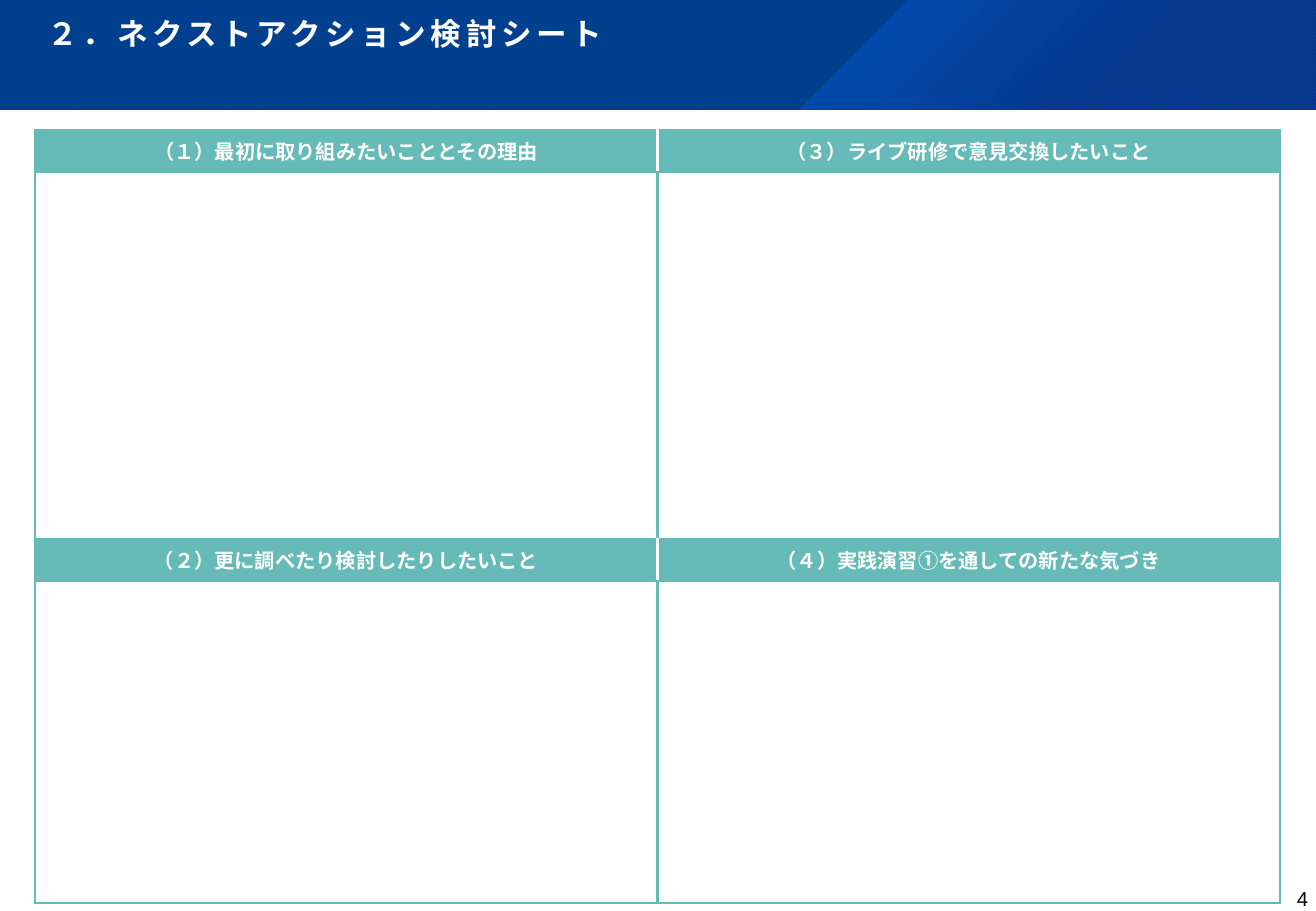
from lxml import etree
from pptx import Presentation
from pptx import util as u
from pptx.dml.color import RGBColor
from pptx.enum import dml, shapes, text
from pptx.oxml import parse_xml
from pptx.oxml.ns import nsdecls, qn

PX = 7526  # EMU per px
W, H = 1316, 911
COLORS = {
    "navy": "004292", "stripe": "003579", "sky": "0064DF", "indigo": "0C338E",
    "teal": "66BAB7", "white": "FFFFFF", "black": "000000",
}
HEADINGS = [
    ["（１）最初に取り組みたいこととその理由", "（３）ライブ研修で意見交換したいこと"],
    ["（２）更に調べたり検討したりしたいこと", "（４）実践演習①を通しての新たな気づき"],
]


def px(*lengths):
    return [u.Emu(n * PX) for n in lengths]


def rgb(name):
    return RGBColor.from_string(COLORS[name])


def write(p, words, size, font, color, align, bold=False):
    r = p.add_run()
    r.text = words
    p.alignment = align
    f = p.font
    f.size, f.name, f.bold = u.Pt(size), font, bold
    f.color.rgb = rgb(color)
    return r


def set_margins(tf, left, top, right, bottom):
    tf.margin_left, tf.margin_top, tf.margin_right, tf.margin_bottom = px(
        left, top, right, bottom)


def fill_glow(sp):
    """Fill with a translucent gradient spreading from the top left corner."""
    stops = "".join(
        f'<a:gs pos="{pos}"><a:srgbClr val="{COLORS[name]}">'
        f'<a:alpha val="{alpha}"/></a:srgbClr></a:gs>'
        for pos, name, alpha in [(0, "sky", 50000), (62000, "indigo", 55000)])
    grad = parse_xml(
        f'<a:gradFill {nsdecls("a")} rotWithShape="1"><a:gsLst>{stops}</a:gsLst>'
        '<a:path path="circle"><a:fillToRect r="100000" b="100000"/></a:path>'
        '</a:gradFill>')
    sp.fill.background()
    pr = sp._element.spPr
    pr.replace(pr.find(qn("a:noFill")), grad)


def add_header(s, x, y, w, h, words):
    band = s.shapes.add_shape(shapes.MSO_SHAPE.RECTANGLE, *px(x, y, w, h))
    band.fill.patterned()
    band.fill.pattern = dml.MSO_PATTERN.DARK_UPWARD_DIAGONAL
    band.fill.fore_color.rgb = rgb("stripe")
    band.fill.back_color.rgb = rgb("navy")

    right, bottom = x + w, y + h
    fb = s.shapes.build_freeform(right - 407, y, scale=PX)
    fb.add_line_segments([(right, y), (right, bottom), (right - 517, bottom)])
    slant = fb.convert_to_shape()
    fill_glow(slant)
    for sp in (band, slant):
        sp.line.fill.background()
        sp.shadow.inherit = False

    title = s.shapes.title
    title.left, title.top, title.width, title.height = px(x, y, w, h)
    s.shapes._spTree.append(title._element)  # bring to front
    tf = title.text_frame
    tf.auto_size = text.MSO_AUTO_SIZE.NONE
    tf.vertical_anchor = text.MSO_ANCHOR.TOP
    set_margins(tf, 47, 19, 44, 0)
    p = tf.paragraphs[0]
    p.line_spacing = 0.9
    r = write(p, words, 18.1, "Lato", "white", text.PP_ALIGN.LEFT, True)
    r._r.get_or_add_rPr().set("spc", "270")


def set_borders(cell, **sides):
    pr = cell._tc.get_or_add_tcPr()
    for i, side in enumerate("LRTB"):
        ln = etree.Element(qn(f"a:ln{side}"), w=str(u.Pt(1.5)))
        fill = etree.SubElement(ln, qn("a:solidFill"))
        etree.SubElement(fill, qn("a:srgbClr"), val=COLORS[sides.get(side, "teal")])
        pr.insert(i, ln)


def add_worksheet(s, x, y, w, row_heights):
    n_rows, n_cols = len(row_heights), len(HEADINGS[0])
    table = s.shapes.add_table(
        n_rows, n_cols, *px(x, y, w, sum(row_heights))).table
    table.first_row = table.horz_banding = False
    for row, height in zip(table.rows, row_heights):
        row.height = px(height)[0]
    for i in range(n_rows):
        for j in range(n_cols):
            cell = table.cell(i, j)
            is_heading = i % 2 == 0
            cell.fill.solid()
            cell.fill.fore_color.rgb = rgb("teal" if is_heading else "white")
            if is_heading:
                cell.vertical_anchor = text.MSO_ANCHOR.MIDDLE
                write(cell.text_frame.paragraphs[0], HEADINGS[i // 2][j], 12,
                      "Lato", "white", text.PP_ALIGN.CENTER, True)
                set_borders(cell, **{"R" if j == 0 else "L": "white"})
            else:
                set_borders(cell)


def add_page_number(s, x, y, w, h, number):
    tf = s.shapes.add_textbox(*px(x, y, w, h)).text_frame
    tf.word_wrap = True
    set_margins(tf, 0, 0, 0, 0)
    write(tf.paragraphs[0], number, 12, "Arial", "black", text.PP_ALIGN.RIGHT)


def main():
    prs = Presentation()
    prs.slide_width, prs.slide_height = px(W, H)
    s = prs.slides.add_slide(prs.slide_layouts[5])
    add_header(s, 0, 0, W, 110, "２．ネクストアクション検討シート")
    add_worksheet(s, 35, 130, 1245, [42, 367, 42, 322])
    add_page_number(s, 1225, 886, 83, 18, "4")
    prs.save("out.pptx")


if __name__ == "__main__":
    main()
